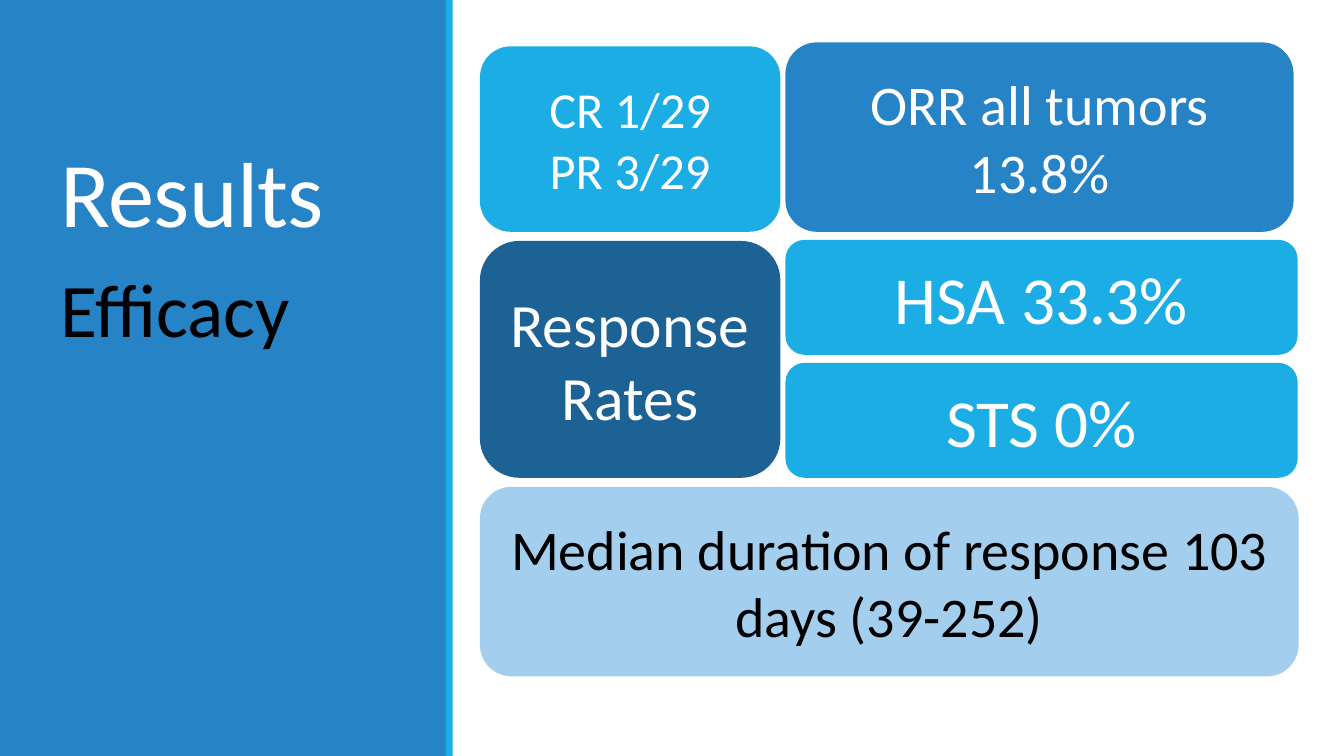
from dataclasses import dataclass

from pptx import Presentation
from pptx.dml.color import RGBColor
from pptx.enum.shapes import MSO_SHAPE as SHAPE
from pptx.enum.text import MSO_ANCHOR as ANCHOR, MSO_AUTO_SIZE as AUTO, PP_ALIGN as ALIGN
from pptx.oxml.ns import qn
from pptx.util import Inches, Pt


@dataclass(frozen=True)
class Theme:
    """Colours, type sizes and font of the slide."""
    font: str = "Calibri"
    white: str = "FFFFFF"
    black: str = "000000"
    blue: str = "2683C6"
    cyan: str = "1CADE4"
    navy: str = "1D6294"
    pale: str = "A3CEED"
    title: int = 66
    subtitle: int = 54
    rate: int = 48
    heading: int = 44
    summary: int = 40
    count: int = 36


T = Theme()
LEFT_X, LEFT_W = 4.76, 2.98
RIGHT_X, RIGHT_W = 7.79, 5.08
RATE_Y, RATE_H, RATE_STEP = 2.38, 1.14, 1.22


def add_run(p, text, size, color):
    """Add one formatted run to a paragraph."""
    r = p.add_run()
    r.text = text
    r.font.name = T.font
    r.font.size = Pt(size)
    r.font.color.rgb = RGBColor.from_string(color)
    return r


def add_block(s, kind, box, fill):
    """Add a flat filled shape without outline."""
    sp = s.shapes.add_shape(kind, *map(Inches, box))
    sp.shadow.inherit = False
    sp.fill.solid()
    sp.fill.fore_color.rgb = RGBColor.from_string(fill)
    sp.line.fill.background()
    return sp


def add_card(s, box, fill, lines, size, color=T.white):
    """Add a rounded card with centred lines of text."""
    tf = add_block(s, SHAPE.ROUNDED_RECTANGLE, box, fill).text_frame
    tf.word_wrap = True
    tf.vertical_anchor = ANCHOR.MIDDLE
    for i, line in enumerate(lines):
        p = tf.add_paragraph() if i else tf.paragraphs[0]
        p.alignment = ALIGN.CENTER
        add_run(p, line, size, color)


def fill_placeholder(s, sp, box, anchor, text, size, color, spacing):
    """Place a placeholder above the side panel and write its text."""
    sp.left, sp.top, sp.width, sp.height = map(Inches, box)
    s.shapes._spTree.append(sp._element)
    tf = sp.text_frame
    tf.word_wrap = True
    tf.auto_size = AUTO.NONE
    tf.vertical_anchor = anchor
    p = tf.paragraphs[0]
    p.alignment = ALIGN.LEFT
    p.line_spacing = spacing
    return p, add_run(p, text, size, color)


def add_side_panel(s):
    """Build the coloured panel with the title and subtitle."""
    add_block(s, SHAPE.RECTANGLE, (0, 0, 4.43, 7.5), T.blue)
    add_block(s, SHAPE.RECTANGLE, (4.42, 0, 0.07, 7.5), T.cyan)
    body = s.placeholders[1]
    _, r = fill_placeholder(s, s.shapes.title, (0.5, 0.65, 3.5, 1.84), ANCHOR.BOTTOM,
                            "Results", T.title, T.white, 0.85)
    r.font._element.set("spc", "-50")
    p, _ = fill_placeholder(s, body, (0.5, 2.65, 3.5, 4.25), ANCHOR.TOP,
                            "Efficacy", T.subtitle, T.black, 0.9)
    p.space_before, p.space_after = Pt(12), Pt(2)
    pPr = p._p.get_or_add_pPr()
    pPr.set("marL", "0")
    pPr.set("indent", "0")
    pPr.append(pPr.makeelement(qn("a:buNone"), {}))


def main():
    """Build the slide and save it."""
    prs = Presentation()
    prs.slide_width, prs.slide_height = Inches(13.33), Inches(7.5)
    s = prs.slides.add_slide(prs.slide_layouts[1])
    add_side_panel(s)
    add_card(s, (RIGHT_X, 0.42, 5.04, 1.88), T.blue, ["ORR all tumors 13.8%"], T.summary)
    add_card(s, (LEFT_X, 4.83, 8.12, 1.88), T.pale,
             ["Median duration of response 103 days (39-252)"], T.summary, T.black)
    add_card(s, (LEFT_X, 0.46, LEFT_W, 1.84), T.cyan, ["CR 1/29", "PR 3/29"], T.count)
    for i, rate in enumerate(["HSA 33.3%", "STS 0%"]):
        add_card(s, (RIGHT_X, RATE_Y + i * RATE_STEP, RIGHT_W, RATE_H), T.cyan, [rate], T.rate)
    add_card(s, (LEFT_X, 2.39, LEFT_W, 2.35), T.navy, ["Response Rates"], T.heading)
    prs.save("out.pptx")


if __name__ == "__main__":
    main()
